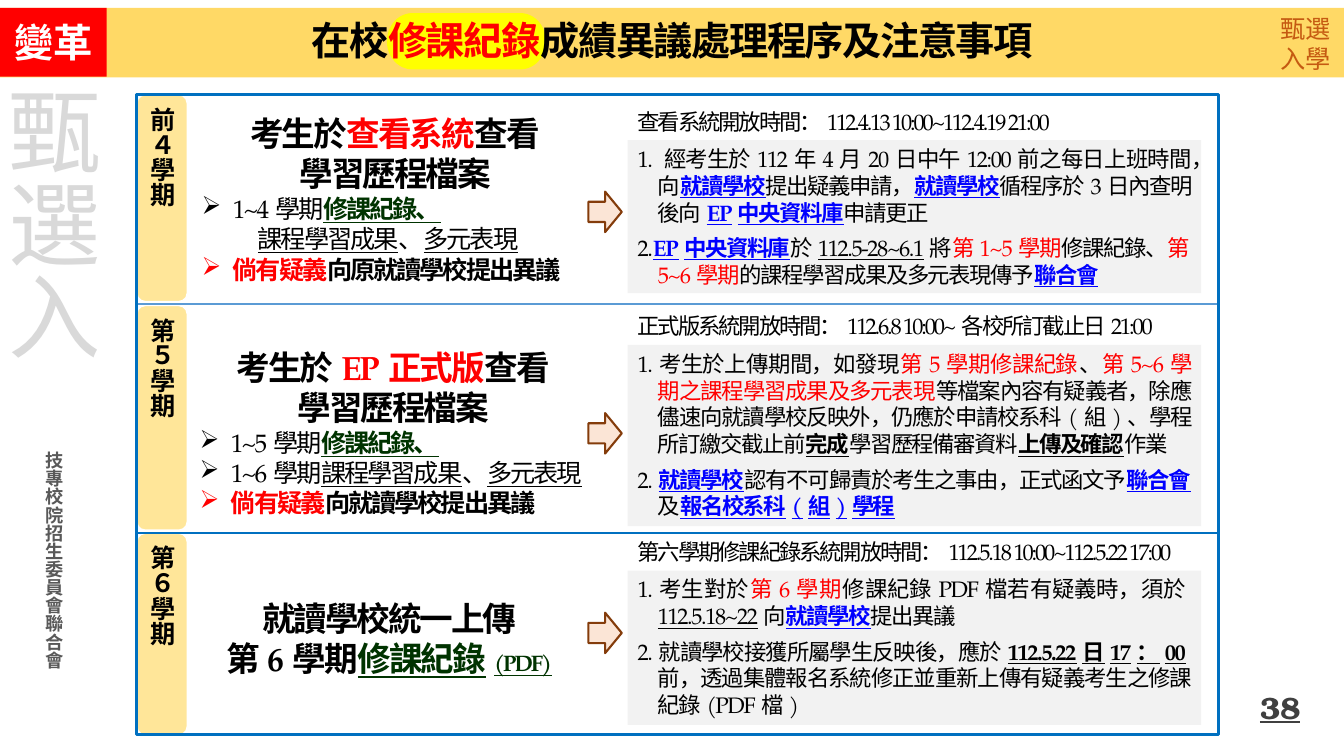
from dataclasses import dataclass

from lxml import etree
from pptx import Presentation
from pptx.dml.color import RGBColor
from pptx.enum.shapes import MSO_CONNECTOR, MSO_SHAPE
from pptx.enum.text import MSO_ANCHOR, PP_ALIGN
from pptx.oxml.ns import qn
from pptx.util import Cm, Pt

RECT, ROUNDED = MSO_SHAPE.RECTANGLE, MSO_SHAPE.ROUNDED_RECTANGLE
ARROW, TERMINATOR = MSO_SHAPE.RIGHT_ARROW, MSO_SHAPE.FLOWCHART_TERMINATOR
STRAIGHT = MSO_CONNECTOR.STRAIGHT
LEFT, CENTER, RIGHT, JUSTIFY = PP_ALIGN.LEFT, PP_ALIGN.CENTER, PP_ALIGN.RIGHT, PP_ALIGN.JUSTIFY
TOP, MIDDLE = MSO_ANCHOR.TOP, MSO_ANCHOR.MIDDLE


@dataclass(frozen=True)
class Theme:
    body_font: str = "TeX Gyre Pagella"
    number_font: str = "TeX Gyre Bonum"
    badge_font: str = "Calibri"
    title_font: str = "Noto Sans CJK SC"
    asian_font: str = "Noto Sans CJK JP"
    black: str = "000000"
    white: str = "FFFFFF"
    red: str = "FF0000"
    link: str = "0000FF"
    green: str = "003300"
    glow: str = "00B050"
    banner: str = "FFD966"
    highlight: str = "FFFF00"
    label: str = "FFE699"
    panel: str = "F2F2F2"
    arrow: str = "FBE5D6"
    arrow_line: str = "843C0B"
    frame: str = "0070C0"
    divider: str = "5B9BD5"
    side: str = "D9D9D9"
    office: str = "595959"
    corner: str = "C55A11"
    number: str = "404040"
    side_size: float = 66
    title_size: float = 28
    heading_size: float = 24
    number_size: float = 22
    label_size: float = 18
    detail_size: float = 16
    office_size: float = 13


THEME = Theme()


@dataclass(frozen=True)
class Mark:
    color: str = THEME.black
    bold: bool = False
    underline: bool = False
    outline: str = ""
    size: float = 0


PLAIN, BOLD = Mark(), Mark(bold=True)
UNDER, STRONG = Mark(underline=True), Mark(bold=True, underline=True)
RED, RED_BOLD = Mark(THEME.red), Mark(THEME.red, True)
LINK = Mark(THEME.link, True, True)
GREEN = Mark(THEME.green, True, True, THEME.glow)
SMALL_GREEN = Mark(THEME.green, True, True, THEME.glow, THEME.detail_size)


@dataclass(frozen=True)
class Para:
    runs: list
    size: float
    align: PP_ALIGN = LEFT
    font: str = THEME.body_font
    spacing: float = 0
    before: float = 0
    indent: float = 0
    hanging: float = 0
    bullet: str = ""
    line: float = 1


def heading(*runs):
    return Para(runs, THEME.heading_size, CENTER, spacing=-1.5)


def point(*runs):
    return Para(runs, THEME.label_size, spacing=-1.5, indent=0.79, hanging=0.79, bullet="➢")


def continuation(*runs):
    return Para(runs, THEME.label_size, spacing=-1.5, indent=1.42)


def detail(*runs, align=JUSTIFY, before=0):
    return Para(runs, THEME.detail_size, align, spacing=-1, before=before, indent=0.51, hanging=0.51)


class Slide:
    def __init__(self, deck, theme):
        self.theme = theme
        self.shapes = deck.slides.add_slide(deck.slide_layouts[6]).shapes

    def shape(self, kind, box, fill=None, line=None, width=1):
        item = self.shapes.add_shape(kind, *map(Cm, box))
        item.shadow.inherit = False
        for part, color in ((item.fill, fill), (item.line.fill, line)):
            if color:
                part.solid()
                part.fore_color.rgb = RGBColor.from_string(color)
            else:
                part.background()
        if line:
            item.line.width = Pt(width)
        return item

    def rule(self, left, right, y, color):
        line = self.shapes.add_connector(STRAIGHT, Cm(left), Cm(y), Cm(right), Cm(y))
        line.line.color.rgb = RGBColor.from_string(color)
        line.line.width = Pt(1.5)
        etree.SubElement(line.element.spPr, qn("a:effectLst"))

    def text(self, box, paras, **options):
        self.fill_text(self.shapes.add_textbox(*map(Cm, box)), paras, **options)

    def fill_text(self, item, paras, anchor=TOP, vertical=False, wrap=True):
        frame = item.text_frame
        frame.word_wrap = wrap
        frame.vertical_anchor = anchor
        if vertical:
            item.element.txBody.find(qn("a:bodyPr")).set("vert", "eaVert")
        for index, para in enumerate(paras):
            self.paragraph(frame.add_paragraph() if index else frame.paragraphs[0], para)

    def paragraph(self, target, para):
        target.alignment = para.align
        target.line_spacing = para.line
        target.space_before = Pt(para.before)
        properties = target._p.get_or_add_pPr()
        properties.set("marL", str(Cm(para.indent)))
        properties.set("indent", str(-Cm(para.hanging)))
        if para.bullet:
            etree.SubElement(properties, qn("a:buChar"), char=para.bullet)
        for content, mark in para.runs:
            run = target.add_run()
            run.text = content
            font = run.font
            font.name, font.size = para.font, Pt(mark.size or para.size)
            font.bold, font.underline = mark.bold, mark.underline
            font.color.rgb = RGBColor.from_string(mark.color)
            style = run._r.get_or_add_rPr()
            style.set("spc", str(int(para.spacing * 100)))
            asian = etree.Element(qn("a:ea"), typeface=self.theme.asian_font)
            style.find(qn("a:latin")).addnext(asian)
            if mark.outline:
                edge = etree.Element(qn("a:ln"), w=str(Pt(0.75)))
                fill = etree.SubElement(edge, qn("a:solidFill"))
                etree.SubElement(fill, qn("a:srgbClr"), val=mark.outline)
                style.insert(0, edge)


# label, label top and height, action box, arrow top, hours top, detail top and height
SEMESTERS = [
    ("前４學期", 2.39, 5.21, (4.83, 2.72, 10.26, 4.62), 4.83, 2.59, 3.53, 3.86,
     "查看系統開放時間：112.4.13 10:00~112.4.19 21:00",
     [heading(("考生於", BOLD), ("查看系統", RED_BOLD), ("查看", BOLD)),
      heading(("學習歷程檔案", BOLD)),
      point(("1~4學期", PLAIN), ("修課紀錄、", GREEN)),
      continuation(("課程學習成果", UNDER), ("、", PLAIN), ("多元表現", UNDER)),
      point(("倘有疑義", RED_BOLD), ("向原就讀學校提出異議", BOLD))],
     [detail(("1. 經考生於112年4月20日中午12:00前之每日上班時間，向", PLAIN), ("就讀學校", LINK),
             ("提出疑義申請，", PLAIN), ("就讀學校", LINK), ("循程序於3日內查明後向", PLAIN),
             ("EP中央資料庫", LINK), ("申請更正", PLAIN)),
      detail(("2.", PLAIN), ("EP中央資料庫", LINK), ("於", PLAIN), ("112.5-28~6.1", UNDER),
             ("將", PLAIN), ("第1~5學期", RED), ("修課紀錄、", PLAIN), ("第5~6學期", RED),
             ("的課程學習成果及多元表現傳予", PLAIN), ("聯合會", LINK), align=LEFT, before=6)]),
    ("第５學期", 7.7, 5.66, (4.78, 8.61, 10.26, 4.62), 10.41, 7.75, 8.69, 4.57,
     "正式版系統開放時間：112.6.8 10:00~各校所訂截止日21:00",
     [heading(("考生於", BOLD), ("EP正式版", RED_BOLD), ("查看", BOLD)),
      heading(("學習歷程檔案", BOLD)),
      point(("1~5學期", PLAIN), ("修課紀錄、", GREEN)),
      point(("1~6學期", PLAIN), ("課程學習成果", UNDER), ("、", PLAIN), ("多元表現", UNDER)),
      point(("倘有疑義", RED_BOLD), ("向就讀學校提出異議", BOLD))],
     [detail(("1.考生於上傳期間，如發現", PLAIN), ("第5學期修課紀錄", RED), ("、", PLAIN),
             ("第5~6學期之課程學習成果及多元表現", RED),
             ("等檔案內容有疑義者，除應儘速向就讀學校反映外，仍應於申請校系科(組)、學程所訂繳交截止前", PLAIN),
             ("完成", STRONG), ("學習歷程備審資料", PLAIN), ("上傳及確認", STRONG), ("作業", PLAIN)),
      detail(("2.", PLAIN), ("就讀學校", LINK), ("認有不可歸責於考生之事由，正式函文予", PLAIN),
             ("聯合會", LINK), ("及", PLAIN), ("報名校系科(組)學程", LINK), before=6)]),
    ("第６學期", 13.44, 5.08, (4.78, 14.94, 10.06, 2.31), 15.44, 13.44, 14.38, 3.89,
     "第六學期修課紀錄系統開放時間：112.5.18 10:00~112.5.22 17:00",
     [heading(("就讀學校統一上傳", BOLD)),
      heading(("第6學期", BOLD), ("修課紀錄", GREEN), ("(PDF)", SMALL_GREEN))],
     [detail(("1.考生對於", PLAIN), ("第6學期", RED), ("修課紀錄PDF檔若有疑義時，須於", PLAIN),
             ("112.5.18~22", UNDER), ("向", PLAIN), ("就讀學校", LINK), ("提出異議", PLAIN)),
      detail(("2.就讀學校接獲所屬學生反映後，應於", PLAIN), ("112.5.22日17：00", STRONG),
             ("前，透過集體報名系統修正並重新上傳有疑義考生之修課紀錄(PDF檔)", PLAIN), before=6)]),
]


def main():
    deck = Presentation()
    deck.slide_width, deck.slide_height = Cm(33.87), Cm(19.05)
    t = THEME
    slide = Slide(deck, t)

    slide.shape(RECT, (0, 0.2, 33.87, 1.75), t.banner)
    slide.text((25.4, 17.3, 7.62, 1.02),
               [Para([("38", Mark(t.number, True, True))], t.number_size, RIGHT, t.number_font)], anchor=MIDDLE)
    slide.text((0.69, 11.13, 1.07, 6.5),
               [Para([("技專校院招生委員會聯合會", Mark(t.office, True))], t.office_size, CENTER, t.asian_font)],
               vertical=True)
    slide.text((-0.51, 1.91, 3.33, 9.58),
               [Para([("甄選入", Mark(t.side))], t.side_size, font=t.title_font)], vertical=True)
    slide.text((32, 0.2, 1.8, 1.8),
               [Para([(word, Mark(t.corner))], t.label_size, CENTER, t.asian_font) for word in ("甄選", "入學")],
               wrap=False)

    for label, top, height, action_box, arrow_y, hours_y, panel_y, panel_h, hours, actions, details in SEMESTERS:
        tab = slide.shape(ROUNDED, (3.45, top, 1.27, height), t.label, t.white)
        slide.fill_text(tab, [Para([(label, BOLD)], t.label_size, CENTER)], anchor=MIDDLE, vertical=True)
        slide.text(action_box, actions)
        slide.shape(ARROW, (14.83, arrow_y, 0.84, 1.02), t.arrow, t.arrow_line, 1.5)
        slide.fill_text(slide.shape(RECT, (15.82, panel_y, 14.45, panel_h), t.panel), details)
        slide.text((15.82, hours_y, 14.88, 0.94), [Para([(hours, PLAIN)], t.detail_size, JUSTIFY, spacing=-1.5)])

    slide.rule(3.45, 30.68, 7.67, t.divider)
    slide.rule(3.45, 30.68, 13.44, t.frame)
    slide.shape(RECT, (3.45, 2.39, 27.25, 16.13), line=t.frame, width=2.25)

    slide.shape(TERMINATOR, (9.75, 0.33, 4.01, 1.42), t.highlight)
    title = [("在校", BOLD), ("修課紀錄", RED_BOLD), ("成績異議處理程序及注意事項", BOLD)]
    slide.text((0, 0.48, 33.87, 1.19),
               [Para(title, t.title_size, CENTER, t.title_font, spacing=-1, line=0.9)], anchor=MIDDLE)
    badge = slide.shape(RECT, (0, 0.2, 2.69, 1.73), t.red)
    slide.fill_text(badge, [Para([("變革", Mark(t.white, True))], t.title_size, CENTER, t.badge_font)], anchor=MIDDLE)
    deck.save("out.pptx")


if __name__ == "__main__":
    main()
